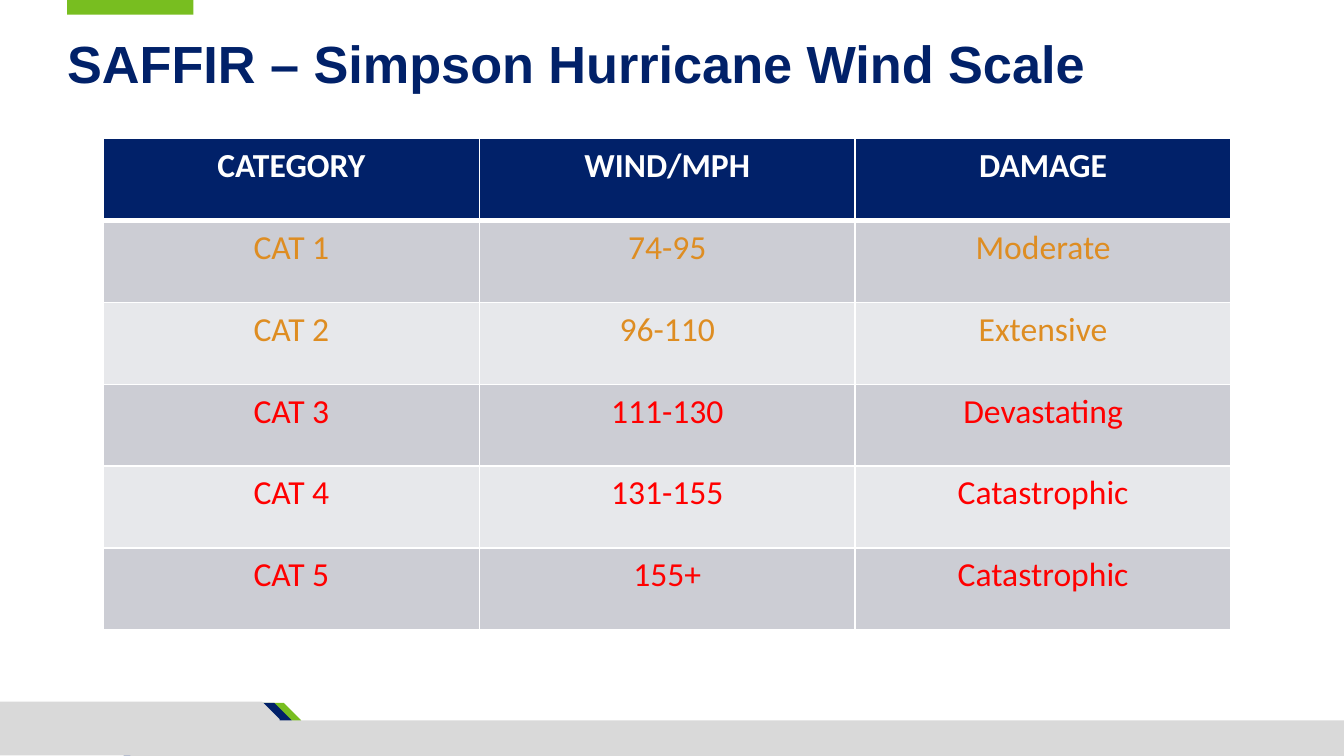
from dataclasses import dataclass

from lxml import etree
from pptx import Presentation
from pptx.dml.color import RGBColor as RGB
from pptx.enum.shapes import MSO_SHAPE as SHAPE
from pptx.enum.text import MSO_ANCHOR as ANCHOR, MSO_AUTO_SIZE as AUTO_SIZE, PP_ALIGN as ALIGN
from pptx.oxml.ns import qn
from pptx.util import Inches, Pt


@dataclass(frozen=True)
class Theme:
    navy: str = "012169"
    green: str = "78BE20"
    gray: str = "D9D9D9"
    white: str = "FFFFFF"
    orange: str = "DE8D22"
    red: str = "FF0000"
    bands: tuple = ("CCCDD4", "E7E8EB")
    title_font: str = "Arial"
    table_font: str = "Calibri"
    title_size: int = 28
    table_size: int = 18


THEME = Theme()
HEADERS = ("CATEGORY", "WIND/MPH", "DAMAGE")
LEVELS = (
    ("CAT 1", "74-95", "Moderate"),
    ("CAT 2", "96-110", "Extensive"),
    ("CAT 3", "111-130", "Devastating"),
    ("CAT 4", "131-155", "Catastrophic"),
    ("CAT 5", "155+", "Catastrophic"),
)
FIRST_MAJOR = 3  # category from which the text turns red


def style_text(p, font, size, color, bold, align):
    p.alignment = align
    for r in p.runs:
        r.font.name = font
        r.font.size = Pt(size)
        r.font.bold = bold
        r.font.color.rgb = RGB.from_string(color)


def add_block(s, kind, left, top, width, height, color):
    sp = s.shapes.add_shape(kind, Inches(left), Inches(top), Inches(width), Inches(height))
    sp.shadow.inherit = False
    sp.fill.solid()
    sp.fill.fore_color.rgb = RGB.from_string(color)
    sp.line.fill.background()
    return sp


def add_tab(s, left, top, width, height, color):
    """Block with its top right corner cut off."""
    sp = add_block(s, SHAPE.SNIP_1_RECTANGLE, left, top, width, height, color)
    sp.adjustments[0] = 0.33


def add_decoration(s):
    # Footer: two coloured stripes behind the gray band
    add_tab(s, 0.99, 5.23, 1.25, 0.39, THEME.green)
    add_tab(s, 0.92, 5.23, 1.25, 0.39, THEME.navy)
    add_tab(s, 0, 5.22, 2.08, 0.4, THEME.gray)
    add_block(s, SHAPE.RECTANGLE, 0.97, 5.36, 9.03, 0.27, THEME.gray)
    # Accent above the title
    add_block(s, SHAPE.RECTANGLE, 0.5, 0, 0.94, 0.11, THEME.green)


def set_title(s, text):
    sp = s.shapes.title
    sp.left, sp.top, sp.width, sp.height = Inches(0.5), Inches(0.23), Inches(9), Inches(0.5)
    tf = sp.text_frame
    tf.text = text
    tf.auto_size = AUTO_SIZE.NONE
    tf.vertical_anchor = ANCHOR.TOP
    tf.margin_left = tf.margin_right = tf.margin_top = tf.margin_bottom = 0
    style_text(tf.paragraphs[0], THEME.title_font, THEME.title_size, THEME.navy, True, ALIGN.LEFT)


def set_borders(cell, **widths):
    """Draw white borders; keys are sides (L, R, T, B), values are points."""
    tc_pr = cell._tc.get_or_add_tcPr()
    for i, (side, width) in enumerate(widths.items()):
        ln = etree.Element(qn(f"a:ln{side}"), w=str(Pt(width)))
        fill = etree.SubElement(ln, qn("a:solidFill"))
        etree.SubElement(fill, qn("a:srgbClr"), val=THEME.white)
        tc_pr.insert(i, ln)


def fill_row(row, texts, fill, color, bold=False, top=1, bottom=1):
    for cell, text in zip(row.cells, texts):
        cell.fill.solid()
        cell.fill.fore_color.rgb = RGB.from_string(fill)
        set_borders(cell, L=1, R=1, T=top, B=bottom)
        cell.text = text
        style_text(cell.text_frame.paragraphs[0], THEME.table_font, THEME.table_size,
                   color, bold, ALIGN.CENTER)


def add_scale_table(s):
    table = s.shapes.add_table(len(LEVELS) + 1, len(HEADERS), Inches(0.77), Inches(1.03),
                               Inches(8.39), Inches(3.66)).table
    header, *rows = table.rows
    fill_row(header, HEADERS, THEME.navy, THEME.white, bold=True, bottom=3)
    for category, (row, texts) in enumerate(zip(rows, LEVELS), start=1):
        color = THEME.red if category >= FIRST_MAJOR else THEME.orange
        fill_row(row, texts, THEME.bands[(category - 1) % 2], color,
                 top=3 if category == 1 else 1)


def main():
    prs = Presentation()
    prs.slide_width = Inches(10)
    prs.slide_height = prs.slide_width * 9 // 16
    s = prs.slides.add_slide(prs.slide_layouts[5])  # title only
    add_decoration(s)
    set_title(s, "SAFFIR – Simpson Hurricane Wind Scale")
    add_scale_table(s)
    prs.save("out.pptx")


if __name__ == "__main__":
    main()
